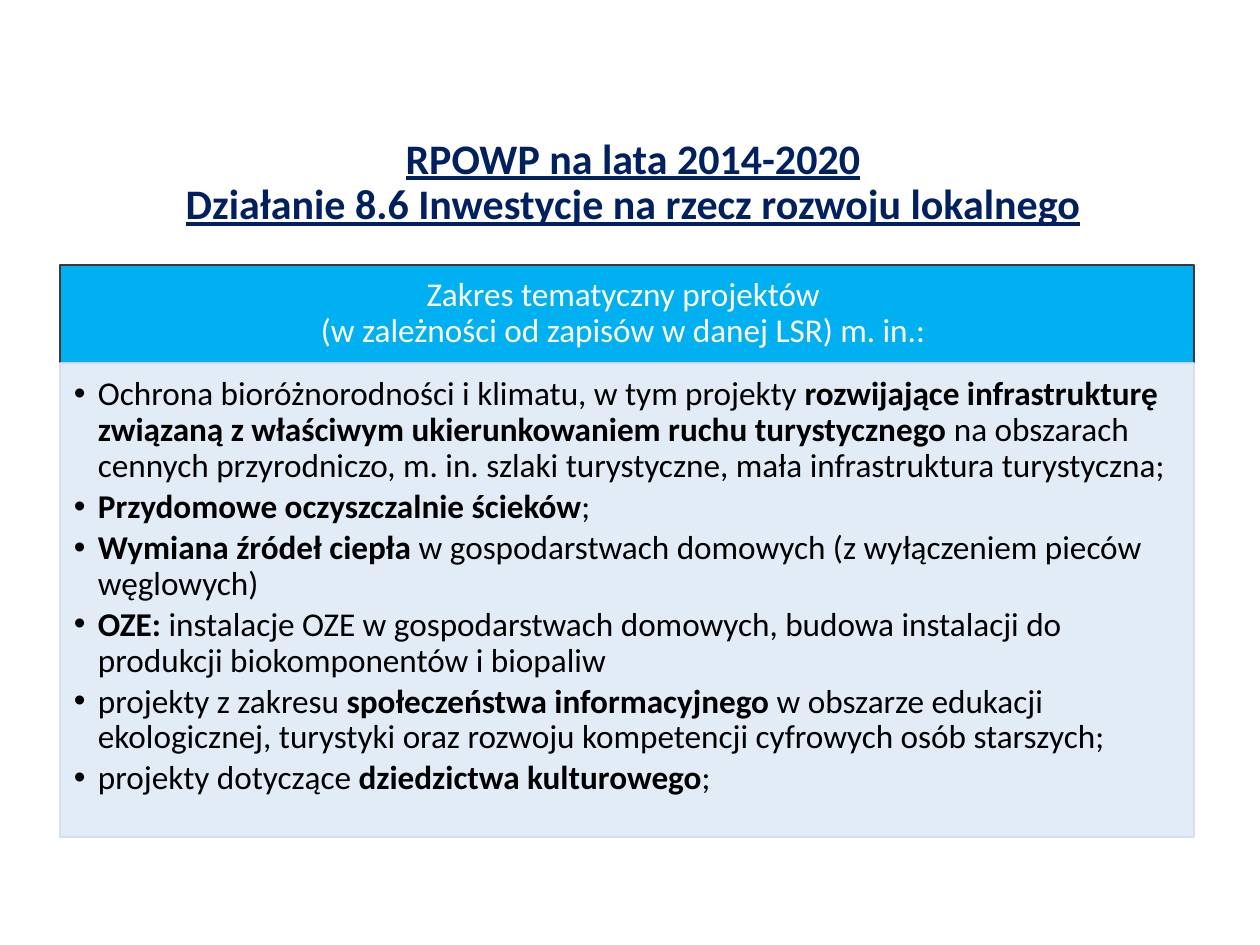
import pptx
import pptx.dml.color
import pptx.enum.shapes
import pptx.enum.text
import pptx.oxml.ns
import pptx.util
from lxml import etree

PX = 914400 // 126
FONT = "Calibri"
NAVY = pptx.dml.color.RGBColor(0x00, 0x20, 0x60)
SKY = pptx.dml.color.RGBColor(0x00, 0xB0, 0xF0)
CHARCOAL = pptx.dml.color.RGBColor(0x3B, 0x38, 0x38)
PALE = pptx.dml.color.RGBColor(0xDE, 0xEB, 0xF7)
PALE_EDGE = pptx.dml.color.RGBColor(0xD2, 0xDE, 0xEF)
WHITE = pptx.dml.color.RGBColor(0xFF, 0xFF, 0xFF)
BLACK = pptx.dml.color.RGBColor(0x00, 0x00, 0x00)

TITLE = "RPOWP na lata 2014-2020\nDziałanie 8.6 Inwestycje na rzecz rozwoju lokalnego"
HEADING = "Zakres tematyczny projektów \n(w zależności od zapisów w danej LSR) m. in.: "
# Each topic is a list of (text, bold) pieces.
TOPICS = [
    [("Ochrona bioróżnorodności i klimatu, w tym projekty ", False),
     ("rozwijające infrastrukturę związaną z właściwym ukierunkowaniem ruchu turystycznego ", True),
     ("na obszarach cennych przyrodniczo, m. in. szlaki turystyczne, "
      "mała infrastruktura turystyczna;", False)],
    [("Przydomowe oczyszczalnie ścieków", True), (";", False)],
    [("Wymiana źródeł ciepła ", True),
     ("w gospodarstwach domowych (z wyłączeniem pieców węglowych)", False)],
    [("OZE: ", True),
     ("instalacje OZE w gospodarstwach domowych, budowa instalacji do produkcji "
      "biokomponentów i biopaliw", False)],
    [("projekty z zakresu ", False), ("społeczeństwa informacyjnego ", True),
     ("w obszarze edukacji ekologicznej, turystyki oraz rozwoju kompetencji cyfrowych "
      "osób starszych;", False)],
    [("projekty dotyczące ", False), ("dziedzictwa kulturowego", True), (";", False)],
]


def px(length):
    return pptx.util.Emu(length * PX)


def add_text(paragraph, text, *, size=19, color=BLACK, bold=False, underline=False):
    for index, line in enumerate(text.split("\n")):
        if index:
            paragraph.add_line_break()
        run = paragraph.add_run()
        run.text = line
        font = run.font
        font.name, font.size = FONT, pptx.util.Pt(size)
        font.bold, font.underline = bold, underline
        font.color.rgb = color


def set_frame(shape, insets, anchor):
    """Set wrapping, anchor and the left, top, right and bottom insets in px."""
    frame = shape.text_frame
    frame.word_wrap = True
    frame.vertical_anchor = anchor
    (frame.margin_left, frame.margin_top,
     frame.margin_right, frame.margin_bottom) = map(px, insets)
    return frame


def add_centred(shape, text, insets, **text_format):
    frame = set_frame(shape, insets, pptx.enum.text.MSO_ANCHOR.MIDDLE)
    paragraph = frame.paragraphs[0]
    paragraph.alignment = pptx.enum.text.PP_ALIGN.CENTER
    paragraph.line_spacing = 0.9
    add_text(paragraph, text, **text_format)


def add_panel(slide, box, fill, edge, opacity=100):
    shape = slide.shapes.add_shape(
        pptx.enum.shapes.MSO_SHAPE.RECTANGLE, *map(px, box))
    shape.shadow.inherit = False
    shape.fill.solid()
    shape.fill.fore_color.rgb = fill
    shape.line.color.rgb = edge
    shape.line.width = pptx.util.Pt(1)
    if opacity < 100:
        qn = pptx.oxml.ns.qn
        for color in shape.fill._xPr.iter(qn("a:srgbClr")):
            etree.SubElement(color, qn("a:alpha"), val=str(opacity * 1000))
    return shape


def add_bullet(paragraph, indent):
    qn = pptx.oxml.ns.qn
    properties = paragraph._p.get_or_add_pPr()
    properties.set("marL", str(px(indent)))
    properties.set("indent", str(-px(indent)))
    etree.SubElement(properties, qn("a:buFont"), typeface="Arial")
    etree.SubElement(properties, qn("a:buChar"), char="•")


def build_title(slide, box):
    shape = slide.shapes.add_textbox(*map(px, box))
    add_centred(shape, TITLE, (12, 0, 12, 0),
                size=24, color=NAVY, bold=True, underline=True)


def build_topics(slide, box, heading_height):
    left, top, width, height = box
    heading = add_panel(slide, (left, top, width, heading_height), SKY, CHARCOAL)
    add_centred(heading, HEADING, (19, 10, 19, 10), color=WHITE)

    body_box = (left, top + heading_height, width, height - heading_height)
    body = add_panel(slide, body_box, PALE, PALE_EDGE, opacity=90)
    frame = set_frame(body, (14, 14, 19, 21), pptx.enum.text.MSO_ANCHOR.TOP)
    for index, pieces in enumerate(TOPICS):
        paragraph = frame.add_paragraph() if index else frame.paragraphs[0]
        add_bullet(paragraph, 24)
        paragraph.alignment = pptx.enum.text.PP_ALIGN.LEFT
        paragraph.line_spacing = 0.9
        paragraph.space_after = pptx.util.Pt(2.85)
        for text, bold in pieces:
            add_text(paragraph, text, bold=bold)


def main():
    presentation = pptx.Presentation()
    presentation.slide_width = pptx.util.Inches(10)
    presentation.slide_height = pptx.util.Inches(7.5)
    slide = presentation.slides.add_slide(presentation.slide_layouts[6])
    build_title(slide, (53, 137, 1160, 92))
    build_topics(slide, (60, 265, 1134, 572), heading_height=98)
    presentation.save("out.pptx")


if __name__ == "__main__":
    main()
